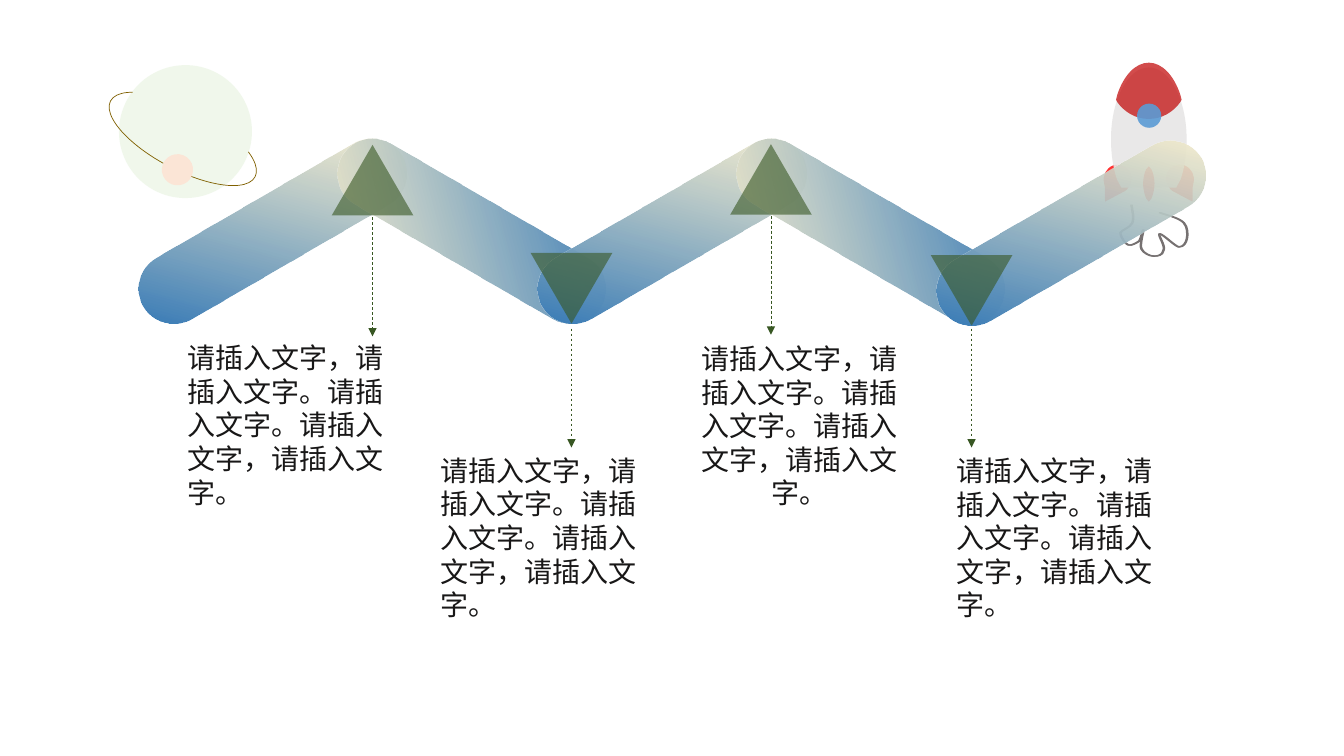
from pptx import Presentation
from pptx.dml.color import RGBColor
from pptx.enum.dml import MSO_LINE
from pptx.enum.shapes import MSO_CONNECTOR, MSO_SHAPE
from pptx.enum.text import MSO_AUTO_SIZE, PP_ALIGN
from pptx.oxml.ns import qn
from pptx.util import Pt
from lxml.etree import SubElement

FONT = "Noto Sans CJK SC"
MESSAGE = "请插入文字，请插入文字。请插入文字。请插入文字，请插入文字。"
GREEN = "385723"
AXIS = 820.6  # vertical axis of the rocket

deck = Presentation()
deck.slide_width, deck.slide_height = Pt(960), Pt(540)
page = deck.slides.add_slide(deck.slide_layouts[6])


def paint(shape, fill=None, opacity=100, line=None, width=1):
    """Give a shape a flat fill and outline, without shadow."""
    shape.shadow.inherit = False
    if fill:
        shape.fill.solid()
        shape.fill.fore_color.rgb = RGBColor.from_string(fill)
        if opacity < 100:
            color = shape.fill._xPr.find(".//" + qn("a:srgbClr"))
            SubElement(color, qn("a:alpha"), val=str(opacity * 1000))
    else:
        shape.fill.background()
    if line:
        shape.line.color.rgb = RGBColor.from_string(line)
        shape.line.width = Pt(width)
    else:
        shape.line.fill.background()


def outline(steps, side=1, shift=0, close=True):
    """Draw lines (2 numbers) and cubic curves (6), measured from the rocket axis."""
    places = [(Pt(AXIS + shift + side * step[i]), Pt(step[i + 1]))
              for step in steps for i in range(0, len(step), 2)]
    builder = page.shapes.build_freeform(*places[0])
    builder.add_line_segments(places[1:], close=close)
    shape = builder.convert_to_shape()
    segments = iter(list(shape._element.iter(qn("a:lnTo"))))
    for step in steps[1:]:
        first = next(segments)
        if len(step) == 6:
            first.tag = qn("a:cubicBezTo")
            for segment in (next(segments), next(segments)):
                first.append(segment[0])
                segment.getparent().remove(segment)
    return shape


# Rocket: fins, body, nose, flame, window and smoke
fin = [(12.5, 124.6), (11.3, 130.3, 13.9, 135.4, 18.9, 137.5), (31.2, 144),
       (31.9, 140.4, 30.5, 133.9, 31.9, 131), (33.3, 125.3, 30.5, 120.2, 25.4, 118.1),
       (20.4, 116.6, 13.9, 119.5, 12.5, 124.6)]
body = [(0, 48.2), (14.8, 48.2, 27, 71, 27, 99.4), (27, 110, 25.6, 119.5, 22.8, 128),
        (19.6, 134), (-19.6, 134), (-22.8, 128),
        (-25.6, 119.5, -27, 110, -27, 99.4), (-27, 71, -14.8, 48.2, 0, 48.2)]
nose = [(0, 44.8), (9.5, 44.8, 18, 54, 22.5, 67.7), (23.4, 71.3), (22.5, 73),
        (17.5, 80, 9.5, 85, 0, 85), (-9.5, 85, -17.5, 80, -22.5, 73),
        (-23.4, 71.3), (-22.5, 67.7), (-18, 54, -9.5, 44.8, 0, 44.8)]
flame = [(-4.1, 131), (-4.1, 127.4, -3, 123.1, -1.9, 121), (0, 118.8), (1.9, 121),
         (3, 123.1, 4.1, 127.4, 4.1, 131), (4.1, 135.4, 3, 139, 1.9, 141.8), (0, 144),
         (-1.9, 141.8), (-3, 139, -4.1, 135.4, -4.1, 131)]
smoke = [(-12, 146.2), (-11.3, 151.2, -9.9, 155.5, -11.3, 159.1),
         (-12.7, 162.7, -19.2, 164.2, -19.9, 166.3),
         (-19.9, 169.2, -16.3, 174.2, -14.2, 175), (-12, 175.7, -8.4, 173.5, -6.3, 172.1),
         (-4.8, 169.9, -4.1, 163.4, -3.4, 164.2), (-3.4, 165.6, -6.3, 175, -4.8, 177.8),
         (-3.4, 180.7, 0.9, 182.9, 3.8, 182.9), (6, 182.9, 10.3, 182.9, 11, 178.6),
         (12.5, 175.7, 6.7, 167.8, 8.1, 167), (10.3, 167, 18.9, 175.7, 21.8, 176.4),
         (25.4, 176.4, 26.9, 173.5, 27.6, 170.6), (28.3, 167.8, 28.3, 162, 25.4, 159.1),
         (21.8, 155.5, 14.6, 154.1, 8.1, 151.9)]
for side in (1, -1):
    paint(outline(fin, side), "FF0000", 80)
for steps, color, opacity in ((body, "E7E6E6", 90), (nose, "C00000", 70), (flame, "FF0000", 80)):
    paint(outline(steps), color, opacity)
window = page.shapes.add_shape(MSO_SHAPE.OVAL, Pt(812.2), Pt(74), Pt(17.3), Pt(17.3))
paint(window, "5B9BD5", 90)
for shift in (0, -0.8):
    paint(outline(smoke, shift=shift, close=False), line="767171")

# Planet with its orbit and moon
planet = page.shapes.add_shape(MSO_SHAPE.OVAL, Pt(85), Pt(46.5), Pt(95), Pt(95))
planet.rotation = 351.5
paint(planet, "E2F0D9", 50)
orbit = page.shapes.add_shape(MSO_SHAPE.ARC, Pt(108.6), Pt(40.9), Pt(43.9), Pt(116.6))
orbit.rotation = 117.7
orbit.adjustments[0] = 152.08
orbit.adjustments[1] = 63.18
paint(orbit, line="806000", width=0.5)
moon = page.shapes.add_shape(MSO_SHAPE.OVAL, Pt(115.6), Pt(110.1), Pt(22.3), Pt(22.3))
moon.rotation = 351.5
paint(moon, "FBE5D6")

# Zigzag of gradient bars
for index, (left, top) in enumerate([(87.8, 139.7), (229.8, 139.7), (373, 139.7),
                                     (514.8, 139.7), (658.1, 140.9)]):
    bar = page.shapes.add_shape(MSO_SHAPE.ROUNDED_RECTANGLE, Pt(left), Pt(top), Pt(213.8), Pt(50.4))
    bar.adjustments[0] = 0.5
    bar.rotation = 30 if index % 2 else 150
    paint(bar)
    bar.fill.gradient()
    bar.fill.gradient_angle = 225
    for stop, color in zip(bar.fill.gradient_stops, ("2E75B6", "FFF2CC")):
        stop.color.rgb = RGBColor.from_string(color)
    pale = bar.fill._xPr.findall(".//" + qn("a:srgbClr"))[1]
    SubElement(pale, qn("a:alpha"), val="90000")

# Milestones: triangle, dashed arrow and text
milestones = [  # centre, triangle top, arrow top, text left, text top
    (266.1, 103.5, 155.3, 126.7, 239.8),
    (408.2, 180.7, 234.7, 307.4, 320.2),
    (550.7, 103, 154.1, 485, 240.3),
    (694, 182.2, 234.7, 676.3, 320.4),
]
for index, (center, peak, start, left, top) in enumerate(milestones):
    triangle = page.shapes.add_shape(MSO_SHAPE.ISOSCELES_TRIANGLE, Pt(center - 29.15), Pt(peak),
                                     Pt(58.3), Pt(50.4))
    triangle.rotation = 180 * (index % 2)
    paint(triangle, GREEN, 60)

    arrow = page.shapes.add_connector(MSO_CONNECTOR.STRAIGHT, Pt(center), Pt(start),
                                      Pt(center), Pt(start + 85))
    arrow.line.color.rgb = RGBColor.from_string(GREEN)
    arrow.line.width = Pt(0.5)
    arrow.line.dash_style = MSO_LINE.DASH
    SubElement(arrow.line._get_or_add_ln(), qn("a:tailEnd"), type="triangle")
    SubElement(arrow._element.spPr, qn("a:effectLst"))

    box = page.shapes.add_textbox(Pt(left), Pt(top), Pt(172.8), Pt(128.2))
    box.text_frame.word_wrap = True
    box.text_frame.auto_size = MSO_AUTO_SIZE.SHAPE_TO_FIT_TEXT
    box.text_frame.text = MESSAGE
    para = box.text_frame.paragraphs[0]
    para.alignment = PP_ALIGN.CENTER if index == 2 else PP_ALIGN.LEFT
    span = para.runs[0]
    span.font.size = Pt(20)
    span.font.name = FONT
    span.font.color.rgb = RGBColor.from_string("181717")
    SubElement(span.font._element, qn("a:ea"), typeface=FONT)

deck.save("out.pptx")
